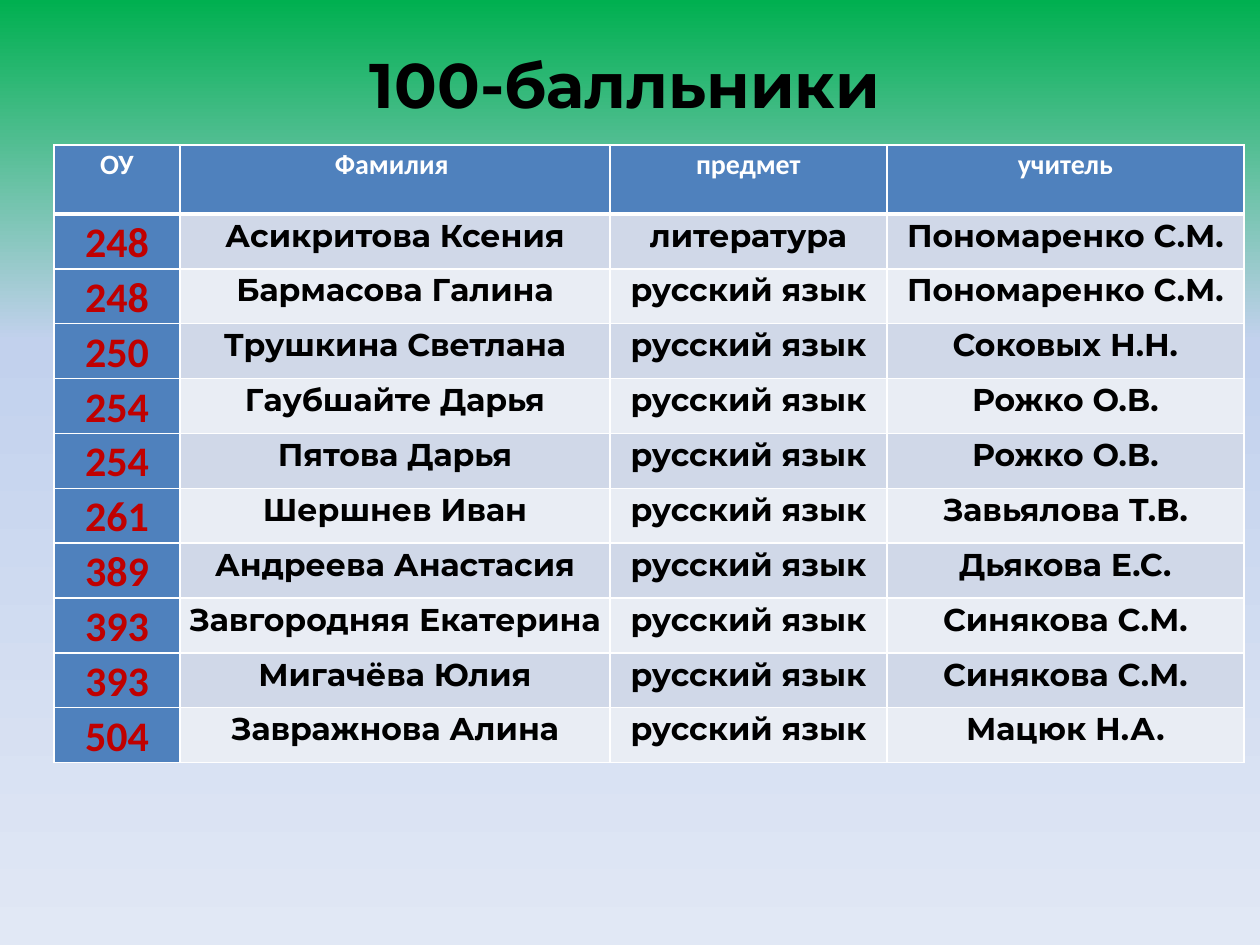
import copy
import pptx
import pptx.dml.color
import pptx.enum.text
import pptx.oxml.ns
import pptx.oxml.xmlchemy
import pptx.util
from lxml import etree

SCALE = 914400 // 126
WHITE, BLACK, BLUE, RED = "FFFFFF", "000000", "4F81BD", "C00000"
BANDS = ["D0D8E8", "E9EDF4"]
STOPS = [(0, "00B050"), (0.36, "C2D1ED"), (1, "E1E8F5")]
WIDTHS = [126, 430, 277, 357]
HEIGHTS = [69, 54, 42] + [54] * 8
HEAD = ["ОУ", "Фамилия ", "предмет", "учитель"]
RUS = "русский язык"
ROWS = [
    ["248", "Асикритова Ксения", "литература", "Пономаренко С.М."],
    ["248", "Бармасова Галина", RUS, "Пономаренко С.М."],
    ["250", "Трушкина Светлана", RUS, "Соковых Н.Н."],
    ["254", "Гаубшайте Дарья", RUS, "Рожко О.В."],
    ["254", "Пятова Дарья", RUS, "Рожко О.В."],
    ["261", "Шершнев Иван", RUS, "Завьялова Т.В."],
    ["389", "Андреева Анастасия", RUS, "Дьякова Е.С."],
    ["393", "Завгородняя Екатерина", RUS, "Синякова С.М."],
    ["393", "Мигачёва Юлия", RUS, "Синякова С.М."],
    ["504", "Завражнова Алина", RUS, "Мацюк Н.А."],
]


def px(n):
    """Turn pixels into EMU."""
    return pptx.util.Emu(n * SCALE)


def color(code):
    """Turn a hex string into a colour."""
    return pptx.dml.color.RGBColor.from_string(code)


def write(frame, text, size, font, code):
    """Set one bold centred paragraph."""
    frame.text = text
    para = frame.paragraphs[0]
    para.alignment = pptx.enum.text.PP_ALIGN.CENTER
    para.line_spacing = 1.07
    face = para.runs[0].font
    face.size, face.name, face.bold = pptx.util.Pt(size), font, True
    face.color.rgb = color(code)


def paint(slide):
    """Give the slide its gradient background."""
    fill = slide.background.fill
    fill.gradient()
    fill.gradient_angle = 270
    stops = slide.element.find(".//" + pptx.oxml.ns.qn("a:gsLst"))
    stops.append(copy.deepcopy(stops[0]))
    for stop, (place, code) in zip(fill.gradient_stops, STOPS):
        stop.position = place
        stop.color.rgb = color(code)


def title(slide, text):
    """Place the slide title."""
    shape = slide.shapes.title
    shape.left, shape.top, shape.width, shape.height = map(px, (343, 34, 564, 91))
    frame = shape.text_frame
    write(frame, text, 36, "Montserrat", BLACK)
    frame.word_wrap = False
    frame.vertical_anchor = pptx.enum.text.MSO_ANCHOR.TOP
    frame.paragraphs[0].space_before = pptx.util.Pt(0)
    frame.paragraphs[0].space_after = pptx.util.Pt(8)


def edge(cell, side, width):
    """Draw one white cell border."""
    qn = pptx.oxml.ns.qn
    props = cell._tc.get_or_add_tcPr()
    line = etree.Element(qn("a:ln" + side), w=str(pptx.util.Pt(width)))
    solid = etree.SubElement(line, qn("a:solidFill"))
    etree.SubElement(solid, qn("a:srgbClr"), val=WHITE)
    props.insert(len(props) - 1, line)


def style(row, col):
    """Pick fill, size, font and colour for a cell."""
    if row == 0:
        return BLUE, 16, "Calibri", WHITE
    if col == 0:
        return BLUE, 24, "Calibri", RED
    return BANDS[(row - 1) % 2], 18, "Montserrat", BLACK


def grid(slide, rows):
    """Build the table of pupils."""
    table = slide.shapes.add_table(
        len(rows), len(WIDTHS), px(54), px(145), px(sum(WIDTHS)), px(sum(HEIGHTS))
    ).table
    for col, width in zip(table.columns, WIDTHS):
        col.width = px(width)
    for row, height in zip(table.rows, HEIGHTS):
        row.height = px(height)
    for r, texts in enumerate(rows):
        for c, text in enumerate(texts):
            cell = table.cell(r, c)
            back, size, font, code = style(r, c)
            write(cell.text_frame, text, size, font, code)
            cell.margin_left = cell.margin_right = px(9)
            cell.margin_top = cell.margin_bottom = 0
            cell.fill.solid()
            cell.fill.fore_color.rgb = color(back)
            for side in "LRTB":
                thick = (r, side) in [(0, "B"), (1, "T")]
                edge(cell, side, 3 if thick else 1)


def main():
    """Build and save the slide."""
    deck = pptx.Presentation()
    deck.slide_width, deck.slide_height = px(1260), px(945)
    slide = deck.slides.add_slide(deck.slide_layouts[5])
    paint(slide)
    title(slide, "100-балльники")
    grid(slide, [HEAD] + ROWS)
    deck.save("out.pptx")


if __name__ == "__main__":
    main()
